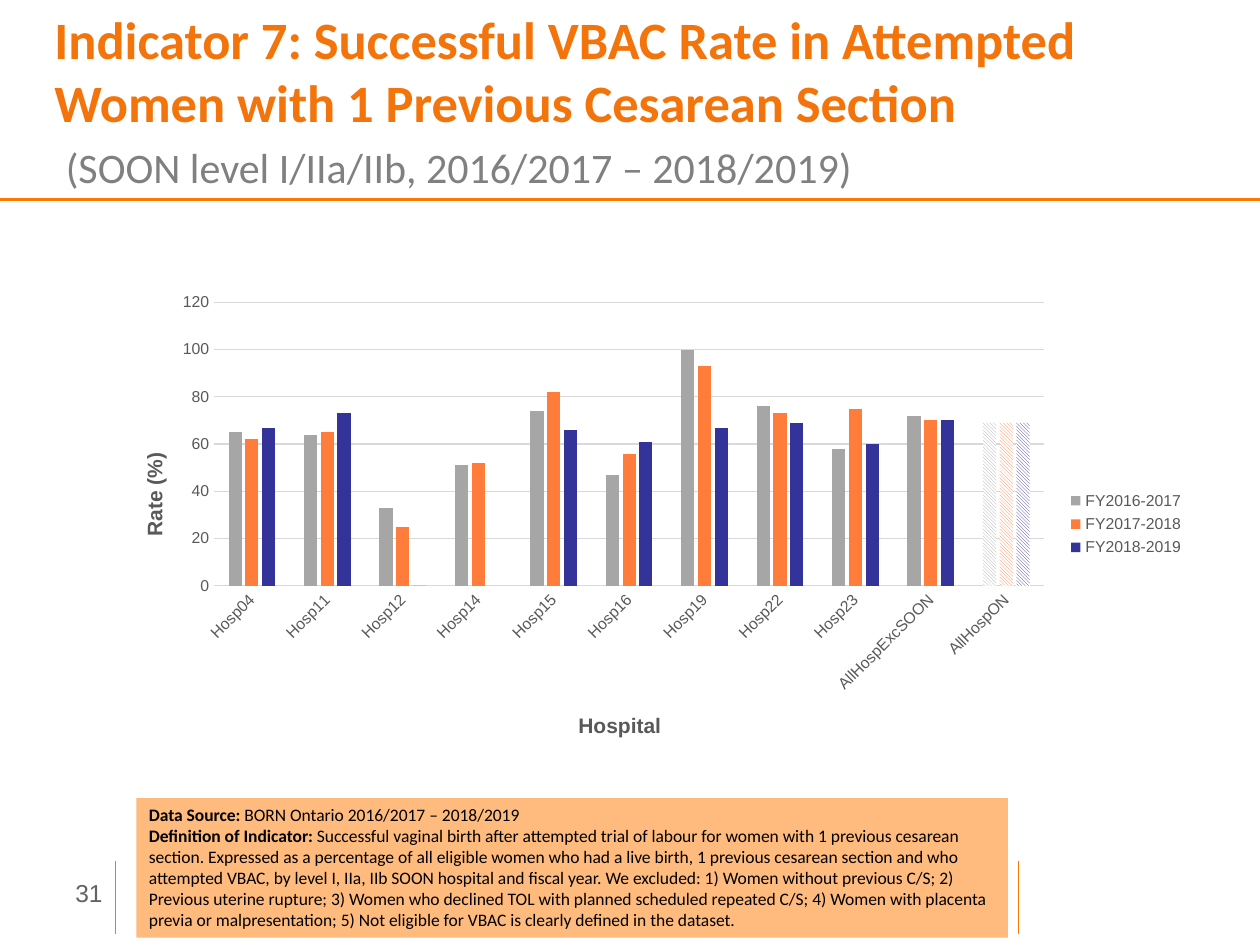
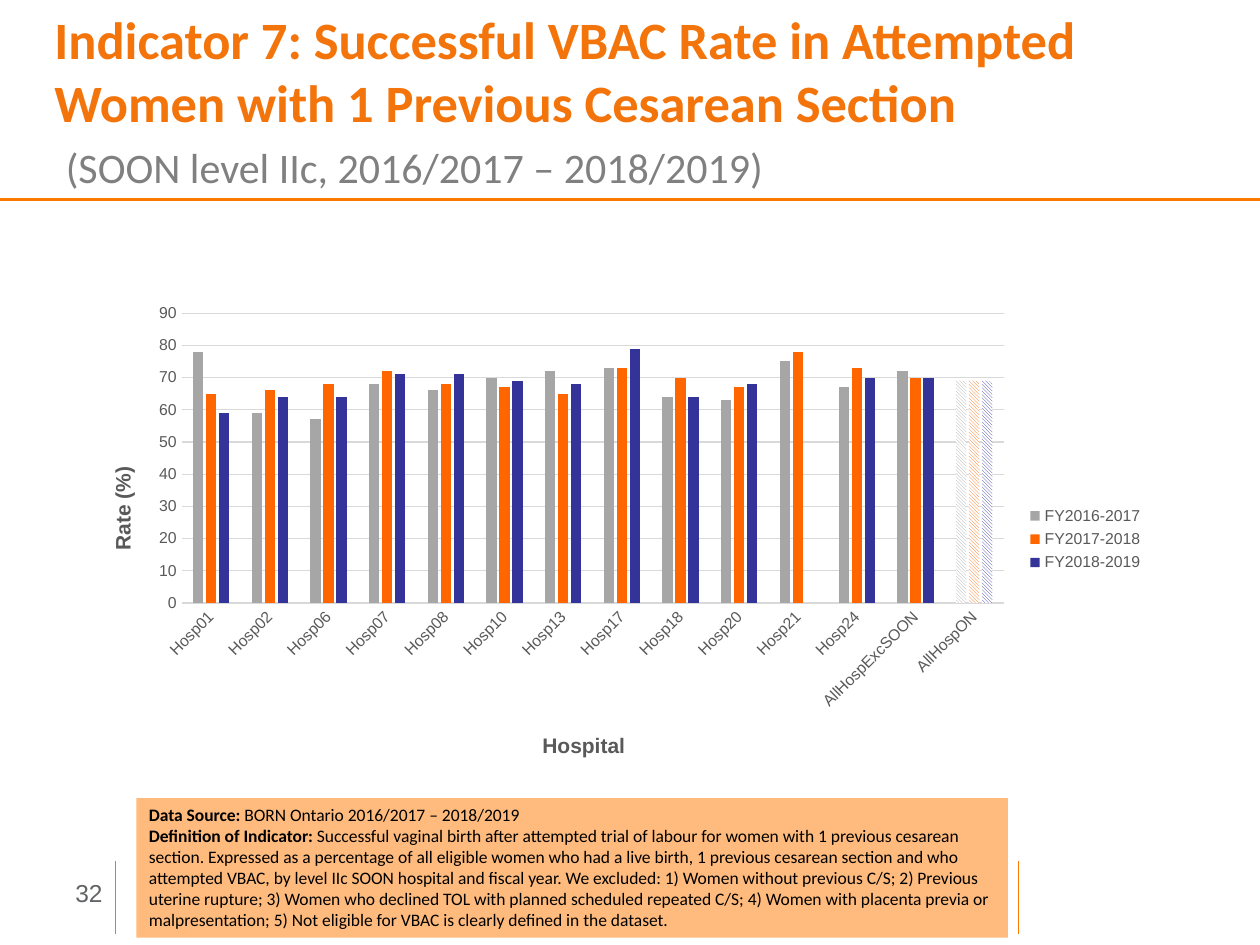
"""Builds two slides on VBAC success rates, each with a clustered column chart by hospital."""
from dataclasses import dataclass

from lxml import etree
from pptx import Presentation
from pptx.chart.data import CategoryChartData
from pptx.dml.color import RGBColor as RGB
from pptx.enum.chart import XL_CHART_TYPE as CHART, XL_LEGEND_POSITION as LEGEND, XL_TICK_MARK as TICK
from pptx.enum.dml import MSO_PATTERN as PATTERN
from pptx.enum.shapes import MSO_CONNECTOR as CONNECTOR, MSO_SHAPE as SHAPE
from pptx.enum.text import MSO_ANCHOR as ANCHOR, PP_ALIGN as ALIGN
from pptx.oxml.ns import qn
from pptx.util import Inches, Pt


@dataclass(frozen=True)
class Theme:
    head: str = "Calibri"
    body: str = "Arial"
    title: RGB = RGB.from_string("F3740B")
    subtitle: RGB = RGB.from_string("808080")
    rule: RGB = RGB.from_string("FB7900")
    number: RGB = RGB.from_string("616365")
    note_fill: RGB = RGB.from_string("FFBB7D")
    black: RGB = RGB.from_string("000000")
    white: RGB = RGB.from_string("FFFFFF")
    label: RGB = RGB.from_string("595959")
    grid: RGB = RGB.from_string("D9D9D9")
    gray: RGB = RGB.from_string("A6A6A6")
    navy: RGB = RGB.from_string("333399")
    title_size: Pt = Pt(30)
    subtitle_size: Pt = Pt(24)
    number_size: Pt = Pt(14)
    note_size: Pt = Pt(10)
    axis_size: Pt = Pt(12)
    label_size: Pt = Pt(9)


T = Theme()
COLS, ROWS = 120, 90
TITLE = "Indicator 7: Successful VBAC Rate in Attempted Women with 1 Previous Cesarean Section"
DEFINITION = (
    "Successful vaginal birth after attempted trial of labour for women with 1 previous cesarean section. "
    "Expressed as a percentage of all eligible women who had a live birth, 1 previous cesarean section and "
    "who attempted VBAC, by level {} SOON hospital and fiscal year. We excluded: 1) Women without previous "
    "C/S; 2) Previous uterine rupture; 3) Women who declined TOL with planned scheduled repeated C/S; "
    "4) Women with placenta previa or malpresentation; 5) Not eligible for VBAC is clearly defined in the dataset."
)
YEARS = ["FY2016-2017", "FY2017-2018", "FY2018-2019"]
RULES = [(0, 19, COLS, 19, 2), (11, 82, 11, 89, 1), (97, 82, 97, 89, 1)]
SLIDES = [
    dict(
        number="31", level="SOON level I/IIa/IIb", group="I, IIa, IIb", box=(10, 27, 104, 45),
        top=120, step=20, orange=RGB.from_string("FF7C3B"),
        hospitals=["04", "11", "12", "14", "15", "16", "19", "22", "23"],
        rates=[
            [65, 64, 33, 51, 74, 47, 100, 76, 58, 72, 69],
            [62, 65, 25, 52, 82, 56, 93, 73, 75, 70, 69],
            [67, 73, 0, None, 66, 61, 67, 69, 60, 70, 69],
        ],
    ),
    dict(
        number="32", level="SOON level IIc", group="IIc", box=(7, 28, 103, 46),
        top=90, step=10, orange=RGB.from_string("FF6600"),
        hospitals=["01", "02", "06", "07", "08", "10", "13", "17", "18", "20", "21", "24"],
        rates=[
            [78, 59, 57, 68, 66, 70, 72, 73, 64, 63, 75, 67, 72, 69],
            [65, 66, 68, 72, 68, 67, 65, 73, 70, 67, 78, 73, 70, 69],
            [59, 64, 64, 71, 71, 69, 68, 79, 64, 68, None, 70, 70, 69],
        ],
    ),
]

prs = Presentation()
prs.slide_width, prs.slide_height = Inches(10), Inches(7.5)


def cells(x, y, w, h):
    """Turns grid columns and rows into lengths."""
    col, row = prs.slide_width / COLS, prs.slide_height / ROWS
    return [round(n) for n in (x * col, y * row, w * col, h * row)]


def place(el, **shares):
    """Fixes a chart part at shares of the chart's size."""
    for old in el.findall(qn("c:layout")):
        el.remove(old)
    layout = etree.Element(qn("c:layout"))
    manual = etree.SubElement(layout, qn("c:manualLayout"))
    if "w" in shares:
        etree.SubElement(manual, qn("c:layoutTarget"), val="inner")
    for mode in ("xMode", "yMode"):
        etree.SubElement(manual, qn("c:" + mode), val="edge")
    for key, share in shares.items():
        etree.SubElement(manual, qn("c:" + key), val=str(share))
    overlay = el.find(qn("c:overlay"))
    if overlay is None:
        el.insert(0, layout)
    else:
        overlay.addprevious(layout)


for page in SLIDES:
    s = prs.slides.add_slide(prs.slide_layouts[6])

    for x1, y1, x2, y2, width in RULES:
        ln = s.shapes.add_connector(CONNECTOR.STRAIGHT, *cells(x1, y1, x2, y2))
        ln.line.color.rgb, ln.line.width = T.rule, Pt(width)
        etree.SubElement(ln._element.spPr, qn("a:effectLst"))

    tf = s.shapes.add_textbox(*cells(6, 83, 5.3, 4)).text_frame
    tf.word_wrap = False
    p = tf.paragraphs[0]
    p.text = page["number"]
    p.font.name, p.font.size, p.font.color.rgb = T.body, T.number_size, T.number

    tf = s.shapes.add_textbox(*cells(4, 2, 116, 15)).text_frame
    tf.word_wrap, tf.vertical_anchor = True, ANCHOR.MIDDLE
    p = tf.paragraphs[0]
    p.text = TITLE
    p.font.name, p.font.size, p.font.bold, p.font.color.rgb = T.head, T.title_size, True, T.title
    p = tf.add_paragraph()
    p.text = f"({page['level']}, 2016/2017 – 2018/2019)"
    p.space_before = Pt(5)
    p._p.get_or_add_pPr().set("marL", str(Inches(0.09)))
    p.font.name, p.font.size, p.font.color.rgb = T.head, T.subtitle_size, T.subtitle

    sp = s.shapes.add_shape(SHAPE.RECTANGLE, *cells(13, 76, 83, 13.3))
    sp.shadow.inherit = False
    sp.fill.solid()
    sp.fill.fore_color.rgb = T.note_fill
    sp.line.fill.background()
    tf = sp.text_frame
    tf.word_wrap, tf.vertical_anchor = True, ANCHOR.TOP
    notes = [
        ("Data Source: ", "BORN Ontario 2016/2017 – 2018/2019"),
        ("Definition of Indicator: ", DEFINITION.format(page["group"])),
    ]
    for i, note in enumerate(notes):
        p = tf.add_paragraph() if i else tf.paragraphs[0]
        p.alignment = ALIGN.LEFT
        for text, bold in zip(note, (True, False)):
            r = p.add_run()
            r.text, r.font.bold = text, bold
        p.font.name, p.font.size, p.font.color.rgb = T.head, T.note_size, T.black

    data = CategoryChartData()
    data.categories = ["Hosp" + h for h in page["hospitals"]] + ["AllHospExcSOON", "AllHospON"]
    for year, rates in zip(YEARS, page["rates"]):
        data.add_series(year, rates)
    chart = s.shapes.add_chart(CHART.COLUMN_CLUSTERED, *cells(*page["box"]), data).chart
    chart.has_title = False
    chart.font.name, chart.font.size, chart.font.color.rgb = T.body, T.note_size, T.black
    place(chart._chartSpace.chart.plotArea, x=0.1, y=0.04, w=0.76, h=0.6)

    plot = chart.plots[0]
    plot.gap_width, plot.overlap, plot.vary_by_categories = 219, -27, False
    for ser, color in zip(plot.series, (T.gray, page["orange"], T.navy)):
        ser.invert_if_negative = False
        ser.format.fill.solid()
        ser.format.fill.fore_color.rgb = color
        fill = ser.points[len(page["hospitals"]) + 1].format.fill
        fill.patterned()
        fill.pattern = PATTERN.DARK_DOWNWARD_DIAGONAL
        fill.fore_color.rgb, fill.back_color.rgb = color, T.white

    cat, val = chart.category_axis, chart.value_axis
    for axis, name, x, y in ((cat, "Hospital", 0.43, 0.9), (val, "Rate (%)", 0.03, 0.35)):
        axis.major_tick_mark = axis.minor_tick_mark = TICK.NONE
        font = axis.tick_labels.font
        font.name, font.size, font.color.rgb = T.body, T.label_size, T.label
        p = axis.axis_title.text_frame.paragraphs[0]
        p.text = name
        p.font.name, p.font.size, p.font.bold, p.font.color.rgb = T.body, T.axis_size, True, T.label
        place(axis.axis_title._element, x=x, y=y)
    val.axis_title.text_frame._txBody.bodyPr.set("rot", "-5400000")
    cat._element.find(qn("c:txPr")).find(qn("a:bodyPr")).set("rot", "-2700000")
    val.minimum_scale, val.maximum_scale, val.major_unit = 0, page["top"], page["step"]
    val.format.line.fill.background()
    for line in (cat.format.line, val.major_gridlines.format.line):
        line.color.rgb, line.width = T.grid, Pt(0.75)

    chart.has_legend = True
    legend = chart.legend
    legend.position, legend.include_in_layout = LEGEND.RIGHT, False
    legend.font.name, legend.font.size, legend.font.color.rgb = T.body, T.label_size, T.label
    place(legend._element, x=0.88, y=0.43)

prs.save("out.pptx")
